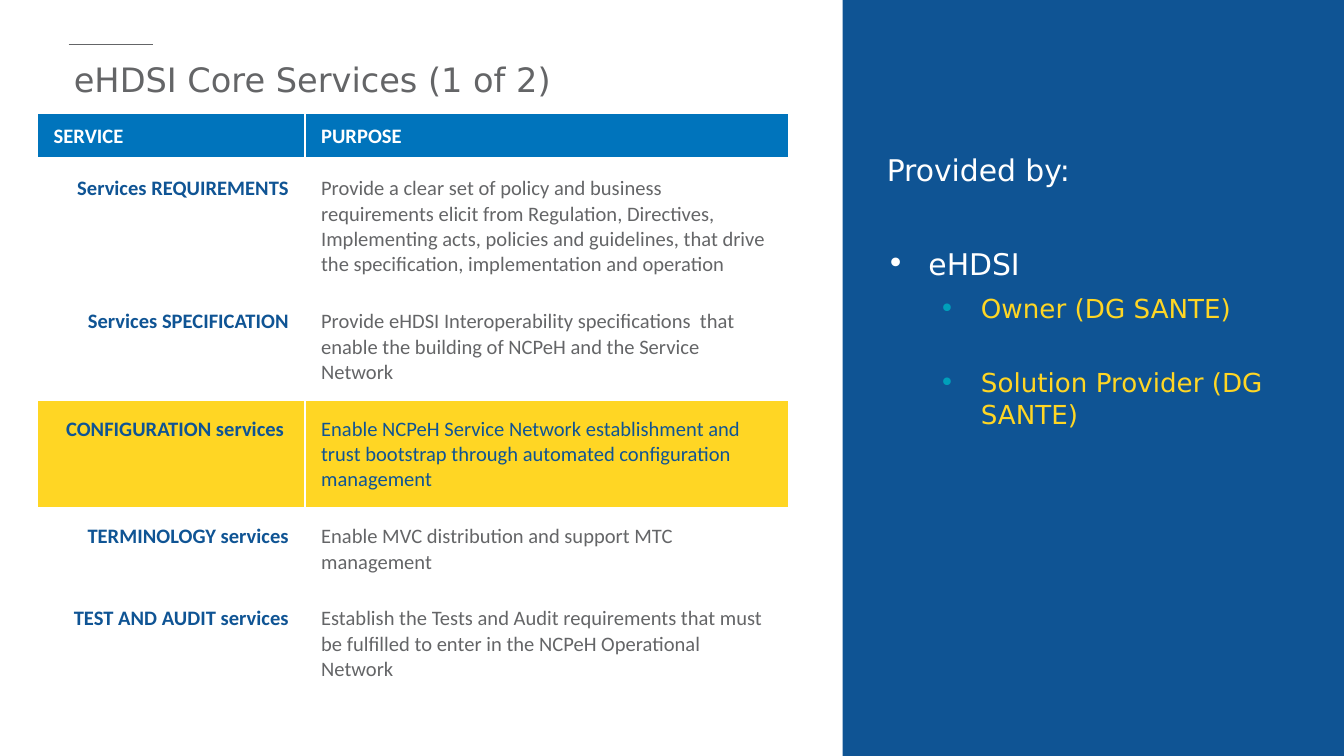
from typing import NamedTuple

from lxml.etree import SubElement
from pptx import Presentation
from pptx.dml.color import RGBColor
from pptx.enum.shapes import MSO_CONNECTOR, MSO_SHAPE
from pptx.enum.text import PP_ALIGN
from pptx.oxml.ns import qn
from pptx.util import Inches, Pt

WHITE = RGBColor(0xFF, 0xFF, 0xFF)
NAVY = RGBColor(0x0F, 0x54, 0x94)
BLUE = RGBColor(0x00, 0x74, 0xBC)
GRAY = RGBColor(0x64, 0x65, 0x67)
YELLOW = RGBColor(0xFF, 0xD6, 0x24)
TEAL = RGBColor(0x00, 0x9F, 0xBA)

HEADING_FONT = "DejaVu Sans"
TABLE_FONT = "Calibri"

SLIDE_WIDTH = Inches(10)
SLIDE_HEIGHT = SLIDE_WIDTH * 9 // 16


class Service(NamedTuple):
    name: str
    purpose: str
    height: float
    fill: RGBColor = WHITE
    purpose_color: RGBColor = GRAY


class Provider(NamedTuple):
    text: str
    size: int
    color: RGBColor
    space_after: int
    indent: float = 0
    bullet_color: RGBColor | None = None


SERVICES = [
    Service("Services REQUIREMENTS",
            "Provide a clear set of policy and business requirements elicit from "
            "Regulation, Directives, Implementing acts, policies and guidelines, "
            "that drive the specification, implementation and operation", 0.99),
    Service("Services SPECIFICATION",
            "Provide eHDSI Interoperability specifications  that enable the "
            "building of NCPeH and the Service Network", 0.8),
    Service("CONFIGURATION services ",
            "Enable NCPeH Service Network establishment and trust bootstrap "
            "through automated configuration management", 0.8, YELLOW, NAVY),
    Service("TERMINOLOGY services",
            "Enable MVC distribution and support MTC management", 0.61),
    Service("TEST AND AUDIT services",
            "Establish the Tests and Audit requirements that must be fulfilled "
            "to enter in the NCPeH Operational Network", 0.8),
]

PROVIDERS = [
    Provider("Provided by:", 16, WHITE, 31),
    Provider("eHDSI", 16, WHITE, 6, 0.31, WHITE),
    Provider("Owner (DG SANTE)", 14, YELLOW, 23, 0.7, TEAL),
    Provider("Solution Provider (DG SANTE)", 14, YELLOW, 6, 0.7, TEAL),
]


def style(paragraph, font_name: str, size: int, color: RGBColor, bold: bool = False) -> None:
    font = paragraph.font
    font.name = font_name
    font.size = Pt(size)
    font.bold = bold
    font.color.rgb = color


def add_bullet(paragraph, indent: float, color: RGBColor) -> None:
    properties = paragraph._p.get_or_add_pPr()
    properties.set("marL", str(Inches(indent)))
    properties.set("indent", str(Inches(-0.31)))
    bullet_color = SubElement(properties, qn("a:buClr"))
    SubElement(bullet_color, qn("a:srgbClr"), val=str(color))
    SubElement(properties, qn("a:buFont"), typeface=HEADING_FONT)
    SubElement(properties, qn("a:buChar"), char="•")


def add_borders(cell, bottom_width: int) -> None:
    """Draw white borders; the XML needs them ahead of the cell's fill."""
    properties = cell._tc.get_or_add_tcPr()
    for side, width in (("L", 1), ("R", 1), ("T", 1), ("B", bottom_width)):
        border = SubElement(properties, qn(f"a:ln{side}"), w=str(Pt(width)))
        fill = SubElement(border, qn("a:solidFill"))
        SubElement(fill, qn("a:srgbClr"), val=str(WHITE))


def fill_cell(cell, text: str, fill: RGBColor, color: RGBColor, bold: bool,
              align: PP_ALIGN, margin: float = 0.12, bottom_width: int = 1) -> None:
    add_borders(cell, bottom_width)
    cell.fill.solid()
    cell.fill.fore_color.rgb = fill
    cell.margin_left = cell.margin_right = Inches(0.12)
    cell.margin_top = cell.margin_bottom = Inches(margin)
    cell.text = text
    paragraph = cell.text_frame.paragraphs[0]
    paragraph.alignment = align
    style(paragraph, TABLE_FONT, 11, color, bold)


def add_side_panel(slide) -> None:
    panel = slide.shapes.add_shape(
        MSO_SHAPE.RECTANGLE, Inches(6.27), 0, Inches(3.77), SLIDE_HEIGHT)
    panel.shadow.inherit = False
    panel.fill.solid()
    panel.fill.fore_color.rgb = NAVY
    panel.line.fill.background()


def add_title(slide) -> None:
    rule = slide.shapes.add_connector(
        MSO_CONNECTOR.STRAIGHT, Inches(0.51), Inches(0.33), Inches(1.14), Inches(0.33))
    rule.line.color.rgb = GRAY
    rule.line.width = Pt(0.75)
    SubElement(rule._element.spPr, qn("a:effectLst"))

    frame = slide.shapes.add_textbox(
        Inches(0.51), Inches(0.39), Inches(5.2), Inches(0.45)).text_frame
    frame.word_wrap = True
    frame.margin_left = frame.margin_right = Inches(0.04)
    title = frame.paragraphs[0]
    title.text = "eHDSI Core Services (1 of 2)"
    style(title, HEADING_FONT, 18, GRAY)


def add_providers(slide) -> None:
    frame = slide.shapes.add_textbox(
        Inches(6.5), Inches(1.08), Inches(3.25), Inches(3.94)).text_frame
    frame.word_wrap = True
    for index, provider in enumerate(PROVIDERS):
        paragraph = frame.add_paragraph() if index else frame.paragraphs[0]
        paragraph.text = provider.text
        paragraph.space_after = Pt(provider.space_after)
        if provider.bullet_color is not None:
            paragraph.level = 1 if provider.indent > 0.5 else 0
            add_bullet(paragraph, provider.indent, provider.bullet_color)
        style(paragraph, HEADING_FONT, provider.size, provider.color)


def add_services(slide) -> None:
    heights = [0.35] + [service.height for service in SERVICES]
    table = slide.shapes.add_table(
        len(heights), 2, Inches(0.28), Inches(0.84),
        Inches(5.59), Inches(sum(heights))).table
    table.horz_banding = False
    for column, width in zip(table.columns, (1.99, 3.6)):
        column.width = Inches(width)
    for row, height in zip(table.rows, heights):
        row.height = Inches(height)

    for column, heading in enumerate(("SERVICE", "PURPOSE")):
        fill_cell(table.cell(0, column), heading, BLUE, WHITE, True,
                  PP_ALIGN.JUSTIFY, margin=0.08, bottom_width=3)
    for row, service in enumerate(SERVICES, start=1):
        fill_cell(table.cell(row, 0), service.name, service.fill, NAVY, True,
                  PP_ALIGN.RIGHT)
        fill_cell(table.cell(row, 1), service.purpose, service.fill,
                  service.purpose_color, False, PP_ALIGN.LEFT)


def main() -> None:
    presentation = Presentation()
    presentation.slide_width = SLIDE_WIDTH
    presentation.slide_height = SLIDE_HEIGHT
    slide = presentation.slides.add_slide(presentation.slide_layouts[6])
    add_side_panel(slide)
    add_title(slide)
    add_providers(slide)
    add_services(slide)
    presentation.save("out.pptx")


if __name__ == "__main__":
    main()
